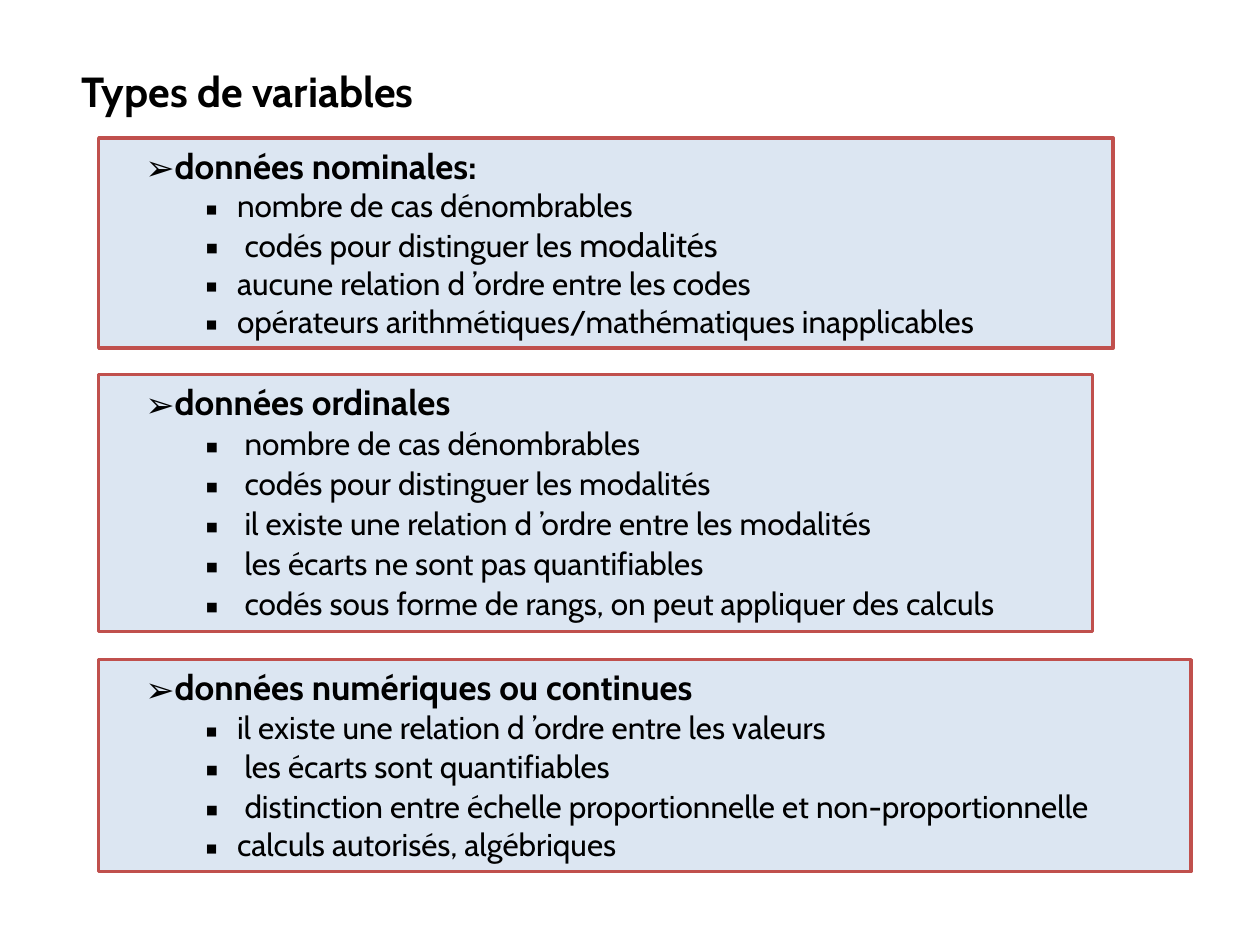
from lxml.etree import SubElement as Sub
from pptx import Presentation
from pptx.dml.color import RGBColor
from pptx.enum.shapes import MSO_SHAPE as Kind
from pptx.enum.text import MSO_ANCHOR as Anchor, MSO_AUTO_SIZE as Fit, PP_ALIGN as Align
from pptx.oxml.ns import qn
from pptx.util import Cm, Pt

BLACK = RGBColor(0x00, 0x00, 0x00)
PALE = RGBColor(0xDC, 0xE6, 0xF2)
RED = RGBColor(0xC0, 0x50, 0x4D)

LEFT = 1.99
STEP = 1.27  # text indent of one list level

# Top, width, height, heading, items; "|" parts the large and normal runs
BOXES = [
    (2.78, 20.45, 4.24, "données nominales:", [
        "nombre de cas dénombrables",
        " |codés pour distinguer les |modalités",
        "aucune relation d ’ordre entre les codes",
        "opérateurs arithmétiques/mathématiques inapplicables",
    ]),
    (7.55, 20.04, 5.18, "données ordinales", [
        " |nombre de cas dénombrables",
        " |codés pour distinguer les modalités",
        " |il existe une relation d ’ordre entre les modalités",
        " |les écarts ne sont pas quantifiables",
        " |codés sous forme de rangs, on peut appliquer des calculs",
    ]),
    (13.3, 22.02, 4.27, "données numériques ou continues", [
        "il existe une relation d ’ordre entre les valeurs",
        " |les écarts sont quantifiables",
        " |distinction entre échelle proportionnelle et non-proportionnelle",
        "calculs autorisés, algébriques",
    ]),
]


class Page:
    font = "Cabin"
    signs = "Noto Sans Symbols"
    head, body, large = 20, 18, 19

    def __init__(self, deck):
        self.slide = deck.slides.add_slide(deck.slide_layouts[6])

    def style(self, run, size, bold=False):
        run.font.name = self.font
        run.font.size = Pt(size)
        run.font.bold = bold
        run.font.color.rgb = BLACK

    def title(self, text, x, y, w, h):
        frame = self.slide.shapes.add_textbox(Cm(x), Cm(y), Cm(w), Cm(h)).text_frame
        frame.word_wrap = True
        frame.auto_size = Fit.SHAPE_TO_FIT_TEXT
        frame.text = text
        self.style(frame.paragraphs[0].runs[0], 24, True)

    def bullet(self, para, level, mark, hang):
        para.level = level
        para.alignment = Align.LEFT
        props = para._p.get_or_add_pPr()
        props.set("marL", str(Cm(STEP * level)))
        props.set("indent", str(-Cm(hang)))
        Sub(props, qn("a:buFont")).set("typeface", self.signs)
        Sub(props, qn("a:buChar")).set("char", mark)

    def item(self, para, text):
        first, *rest = text.split("|")
        para.text = first
        for part in rest:
            para.add_run().text = part
        sizes = (self.large, self.body) if rest else (self.body,)
        for num, run in enumerate(para.runs):
            self.style(run, sizes[num % len(sizes)])
        self.bullet(para, 2, "▪", 0.64)

    def box(self, top, width, height, head, items):
        rect = self.slide.shapes.add_shape(
            Kind.RECTANGLE, Cm(LEFT), Cm(top), Cm(width), Cm(height))
        rect.shadow.inherit = False
        rect.fill.solid()
        rect.fill.fore_color.rgb = PALE
        rect.line.color.rgb = RED
        rect.line.width = Pt(2)

        # Heading, then its list
        frame = rect.text_frame
        frame.word_wrap = True
        frame.auto_size = Fit.SHAPE_TO_FIT_TEXT
        frame.vertical_anchor = Anchor.TOP
        frame.text = head
        para = frame.paragraphs[0]
        self.style(para.runs[0], self.head, True)
        self.bullet(para, 1, "➢", 0.58)
        for text in items:
            self.item(frame.add_paragraph(), text)


def main():
    deck = Presentation()
    deck.slide_width, deck.slide_height = Cm(25.4), Cm(19.05)
    page = Page(deck)
    page.title("Types de variables", 1.4, 1.19, 20.24, 1.27)
    for box in BOXES:
        page.box(*box)
    deck.save("out.pptx")


if __name__ == "__main__":
    main()
